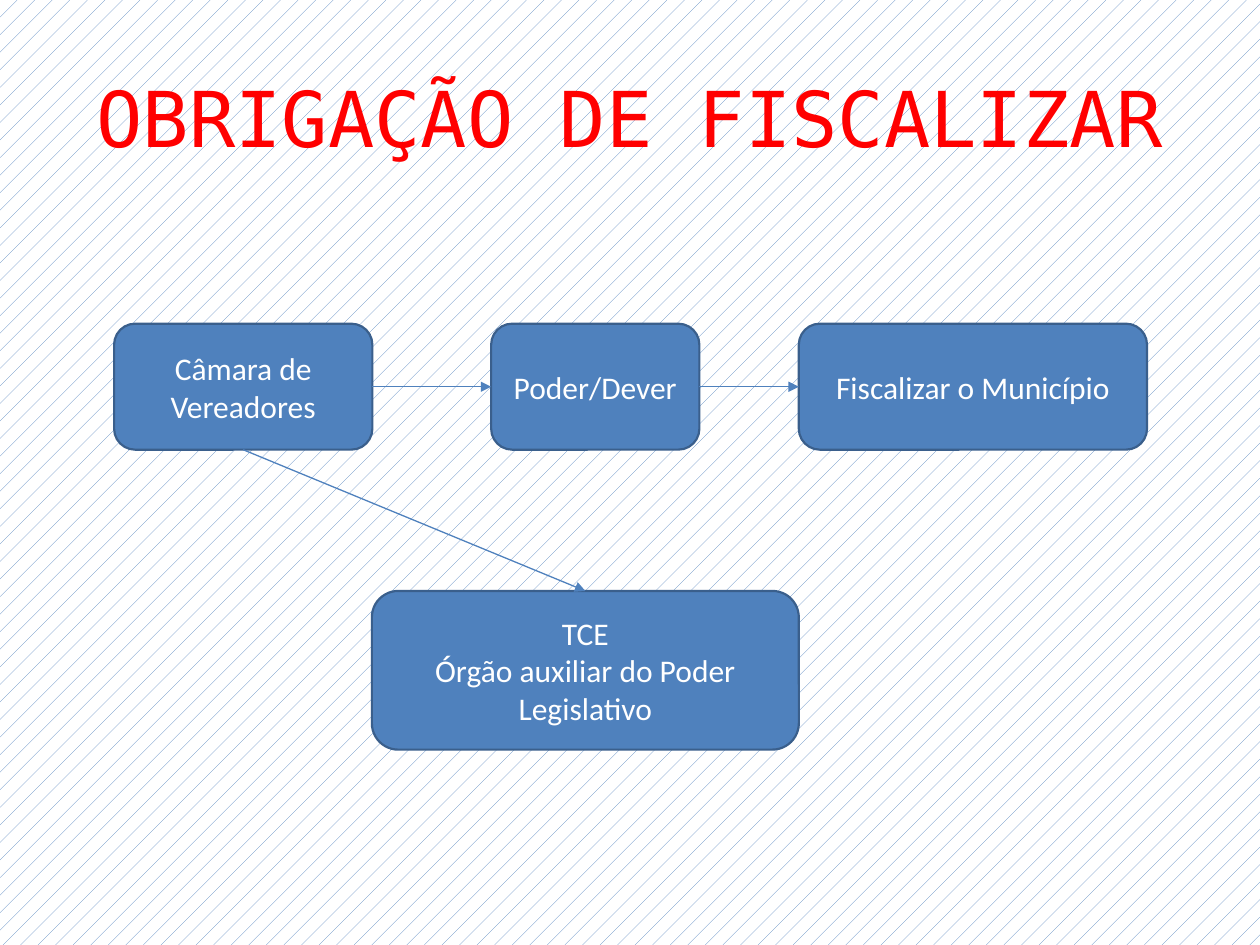
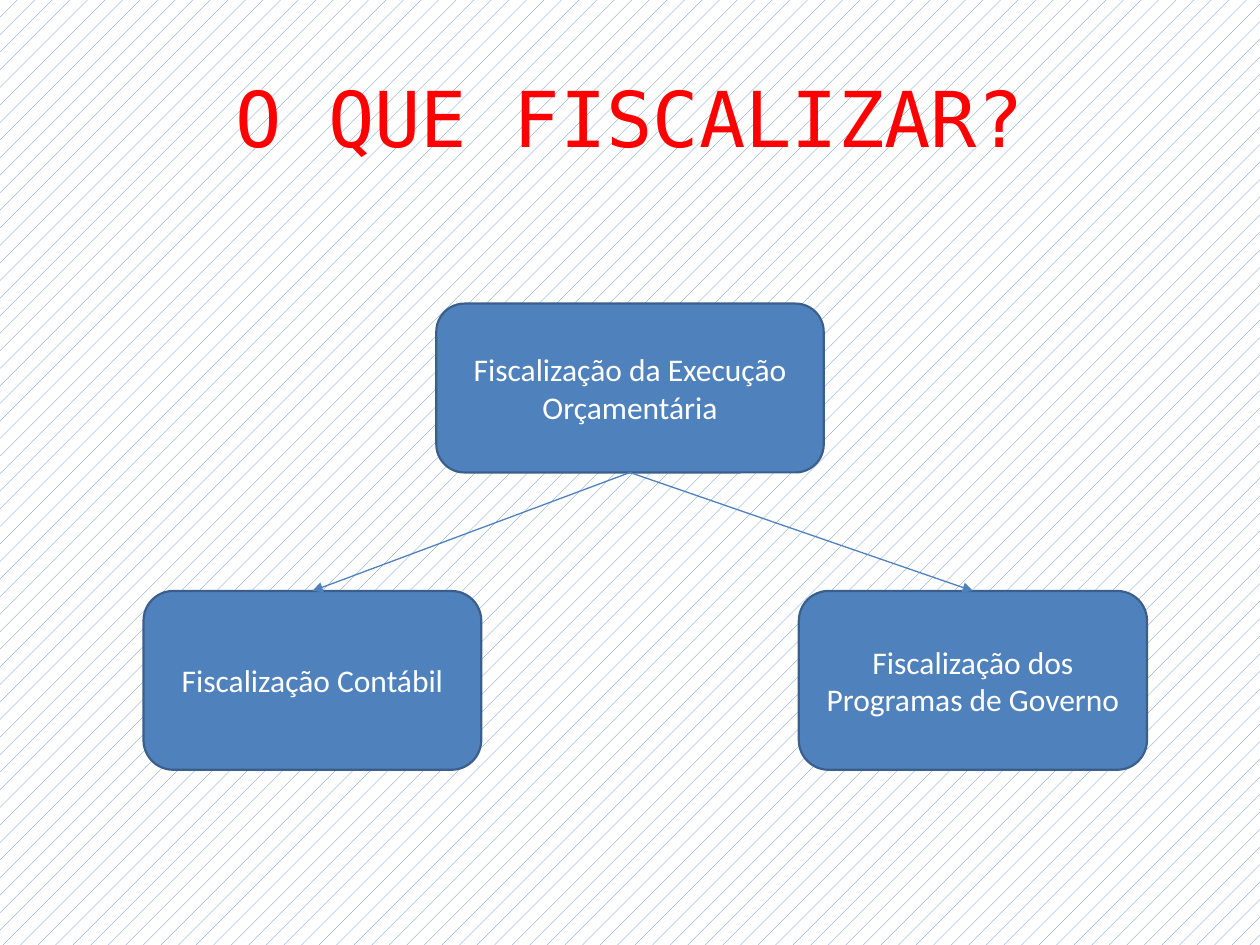
from lxml import etree
from pptx import Presentation
from pptx.dml.color import RGBColor
from pptx.enum import dml, shapes, text
from pptx.oxml import ns
from pptx.util import Pt

RED = RGBColor(0xFF, 0x00, 0x00)
BLUE = RGBColor(0x4F, 0x81, 0xBD)
DARK_BLUE = RGBColor(0x3A, 0x5F, 0x8C)
WHITE = RGBColor(0xFF, 0xFF, 0xFF)
TOP, LEFT, BOTTOM, RIGHT = range(4)
ROW_1, ROW_2 = 185, 337.7
RIGHT_COL, RIGHT_WIDTH = 456.5, 199


class Deck:
    title_font = {"name": "DejaVu Sans Mono", "size": Pt(44)}
    box_font = {"name": "Calibri", "size": Pt(18)}
    frame = {
        "word_wrap": True,
        "auto_size": text.MSO_AUTO_SIZE.NONE,
        "vertical_anchor": text.MSO_ANCHOR.MIDDLE,
    }

    def __init__(self):
        self.prs = Presentation()
        self.prs.slide_width, self.prs.slide_height = Pt(720), Pt(540)
        fill = self.prs.slide_master.background.fill
        fill.patterned()
        fill.pattern = dml.MSO_PATTERN.PERCENT_5
        fill.fore_color.rgb = BLUE
        fill.back_color.rgb = WHITE

    def set_text(self, sp, content, font, color):
        tf = sp.text_frame
        tf.text = content
        for name, value in self.frame.items():
            setattr(tf, name, value)
        for p in tf.paragraphs:
            p.alignment = text.PP_ALIGN.CENTER
            for r in p.runs:
                for name, value in font.items():
                    setattr(r.font, name, value)
                r.font.color.rgb = color

    def slide(self, title):
        self.s = self.prs.slides.add_slide(self.prs.slide_layouts[5])
        sp = self.s.shapes.title
        sp.left, sp.top, sp.width, sp.height = map(Pt, (36, 21.6, 648, 90))
        self.set_text(sp, title, self.title_font, RED)

    def box(self, content, *bounds):
        sp = self.s.shapes.add_shape(
            shapes.MSO_SHAPE.ROUNDED_RECTANGLE, *map(Pt, bounds))
        sp.shadow.inherit = False
        sp.fill.solid()
        sp.fill.fore_color.rgb = BLUE
        sp.line.color.rgb = DARK_BLUE
        sp.line.width = Pt(1.25)
        self.set_text(sp, content, self.box_font, WHITE)
        return sp

    def arrow(self, start, start_side, end, end_side):
        cx = self.s.shapes.add_connector(
            shapes.MSO_CONNECTOR.STRAIGHT, 0, 0, 0, 0)
        cx.begin_connect(start, start_side)
        cx.end_connect(end, end_side)
        cx.line.color.rgb = BLUE
        cx.line.width = Pt(0.75)
        ln = cx.line._get_or_add_ln()
        etree.SubElement(ln, ns.qn("a:tailEnd"), type="triangle")
        etree.SubElement(ln.getparent(), ns.qn("a:effectLst"))


def main():
    deck = Deck()

    deck.slide("OBRIGAÇÃO DE FISCALIZAR")
    council = deck.box("Câmara de Vereadores", 65.2, ROW_1, 147.6, 72)
    duty = deck.box("Poder/Dever", 280.7, ROW_1, 119, 72)
    oversight = deck.box("Fiscalizar o Município", RIGHT_COL, ROW_1, RIGHT_WIDTH, 72)
    court = deck.box("TCE\nÓrgão auxiliar do Poder Legislativo",
                     212.5, ROW_2, 244, 90.7)
    deck.arrow(council, RIGHT, duty, LEFT)
    deck.arrow(duty, RIGHT, oversight, LEFT)
    deck.arrow(council, BOTTOM, court, TOP)

    deck.slide("O QUE FISCALIZAR?")
    budget = deck.box("Fiscalização da Execução Orçamentária",
                      249.3, 173.5, 221.4, 96.5)
    accounting = deck.box("Fiscalização Contábil", 82, ROW_2, 193, 102.2)
    programs = deck.box("Fiscalização dos Programas de Governo",
                        RIGHT_COL, ROW_2, RIGHT_WIDTH, 102.2)
    for target in (accounting, programs):
        deck.arrow(budget, BOTTOM, target, TOP)

    deck.prs.save("out.pptx")


if __name__ == "__main__":
    main()
